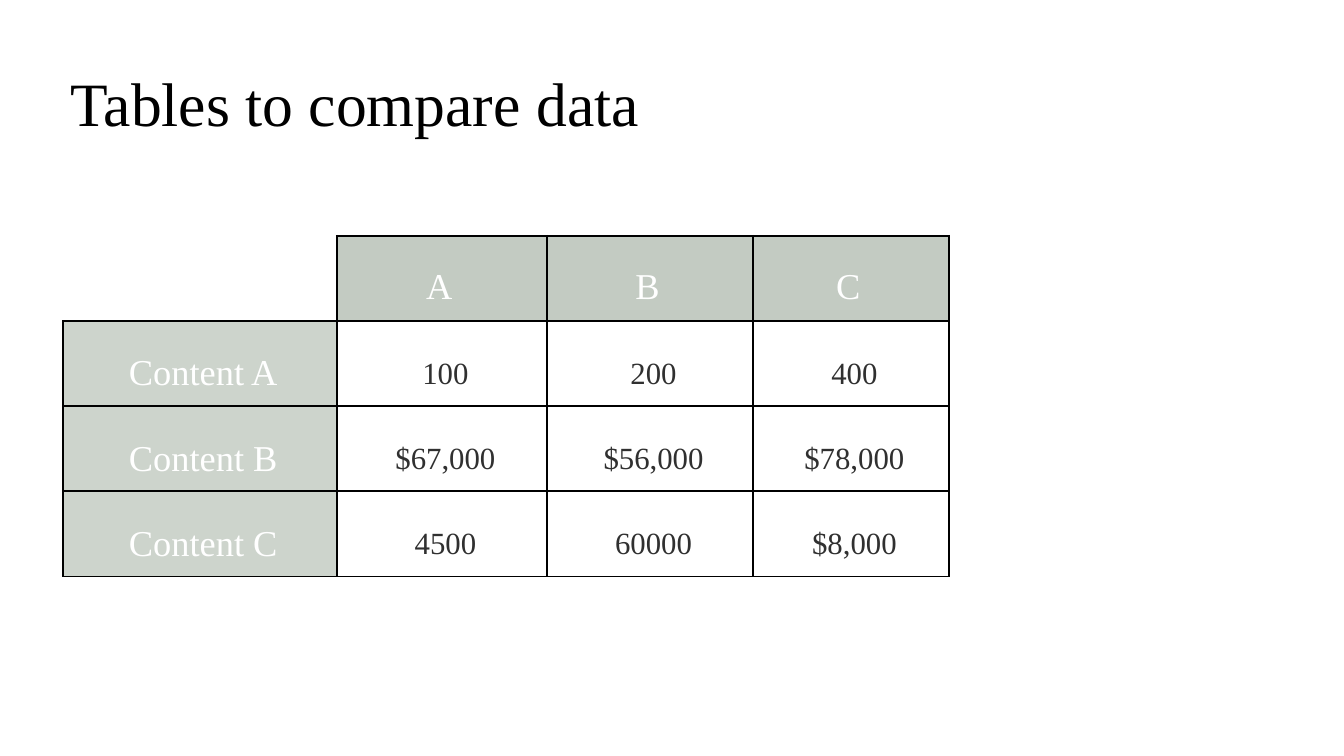
from lxml.etree import SubElement
from pptx import Presentation
from pptx.dml.color import RGBColor
from pptx.enum.text import MSO_ANCHOR, MSO_AUTO_SIZE, PP_ALIGN
from pptx.oxml.ns import qn
from pptx.util import Pt

TITLE = "Tables to compare data"
ROWS = [
    ["", "A", "B", "C"],
    ["Content A", "100", "200", "400"],
    ["Content B", "$67,000", "$56,000", "$78,000"],
    ["Content C", "4500", "60000", "$8,000"],
]
COLUMN_WIDTHS = [195.5, 150.3, 147, 140]
ROW_HEIGHT = 60.84
TABLE_LEFT, TABLE_TOP = 45, 168.5
BORDER_WIDTH = 1.5
FONT = "Times New Roman"
COLORS = {"title": "000000", "border": "000000", "label": "FFFFFF",
          "value": "303030", "shade": "3A5535"}
SIZES = {"title": 44, "label": 26, "value": 22}
HEADER_LAYOUT = {"margin_left": Pt(0), "margin_top": Pt(22.3), "margin_right": Pt(3.6),
                 "margin_bottom": Pt(0), "vertical_anchor": MSO_ANCHOR.TOP}
BODY_LAYOUT = {"margin_left": Pt(8.6), "margin_top": Pt(15.8), "margin_right": Pt(3.6),
               "margin_bottom": Pt(1.4), "vertical_anchor": MSO_ANCHOR.MIDDLE}


def apply(target, values):
    for attribute, value in values.items():
        setattr(target, attribute, value)


def write(paragraph, text, role):
    run = paragraph.add_run()
    run.text = text
    apply(run.font, {"name": FONT, "size": Pt(SIZES[role]), "bold": False})
    run.font.color.rgb = RGBColor.from_string(COLORS[role])


def draw_borders(cell, visible_sides):
    properties = cell._tc.get_or_add_tcPr()
    for side in "LRTB":
        border = SubElement(properties, qn(f"a:ln{side}"), w=str(Pt(BORDER_WIDTH)))
        if side in visible_sides:
            solid = SubElement(border, qn("a:solidFill"))
            SubElement(solid, qn("a:srgbClr"), val=COLORS["border"])
        else:
            SubElement(border, qn("a:noFill"))


def shade(cell, opacity):
    cell.fill.solid()
    cell.fill.fore_color.rgb = RGBColor.from_string(COLORS["shade"])
    color = cell._tc.tcPr.find(f"{qn('a:solidFill')}/{qn('a:srgbClr')}")
    SubElement(color, qn("a:alpha"), val=str(opacity * 1000))


def add_comparison(slide):
    table = slide.shapes.add_table(
        len(ROWS), len(COLUMN_WIDTHS), Pt(TABLE_LEFT), Pt(TABLE_TOP),
        Pt(sum(COLUMN_WIDTHS)), Pt(ROW_HEIGHT * len(ROWS))).table
    apply(table, {"first_row": False, "horz_banding": False})
    for column, width in zip(table.columns, COLUMN_WIDTHS):
        column.width = Pt(width)
    for r, entries in enumerate(ROWS):
        table.rows[r].height = Pt(ROW_HEIGHT)
        for c, entry in enumerate(entries):
            cell = table.cell(r, c)
            draw_borders(cell, "LRTB" if entry else "RB")
            apply(cell, BODY_LAYOUT if r else HEADER_LAYOUT)
            is_label = r == 0 or c == 0
            if entry and is_label:
                shade(cell, 25 if r else 30)
            else:
                cell.fill.background()
            if entry:
                paragraph = cell.text_frame.paragraphs[0]
                paragraph.alignment = PP_ALIGN.CENTER
                write(paragraph, entry, "label" if is_label else "value")


def add_title(slide):
    frame = slide.shapes.add_textbox(Pt(43.2), Pt(43.2), Pt(680.4), Pt(60.5)).text_frame
    apply(frame, {"word_wrap": True, "auto_size": MSO_AUTO_SIZE.SHAPE_TO_FIT_TEXT})
    write(frame.paragraphs[0], TITLE, "title")


def main():
    """Build the data comparison slide."""
    deck = Presentation()
    apply(deck, {"slide_width": Pt(960), "slide_height": Pt(540)})
    slide = deck.slides.add_slide(deck.slide_layouts[6])
    add_comparison(slide)
    add_title(slide)
    deck.save("out.pptx")


if __name__ == "__main__":
    main()
